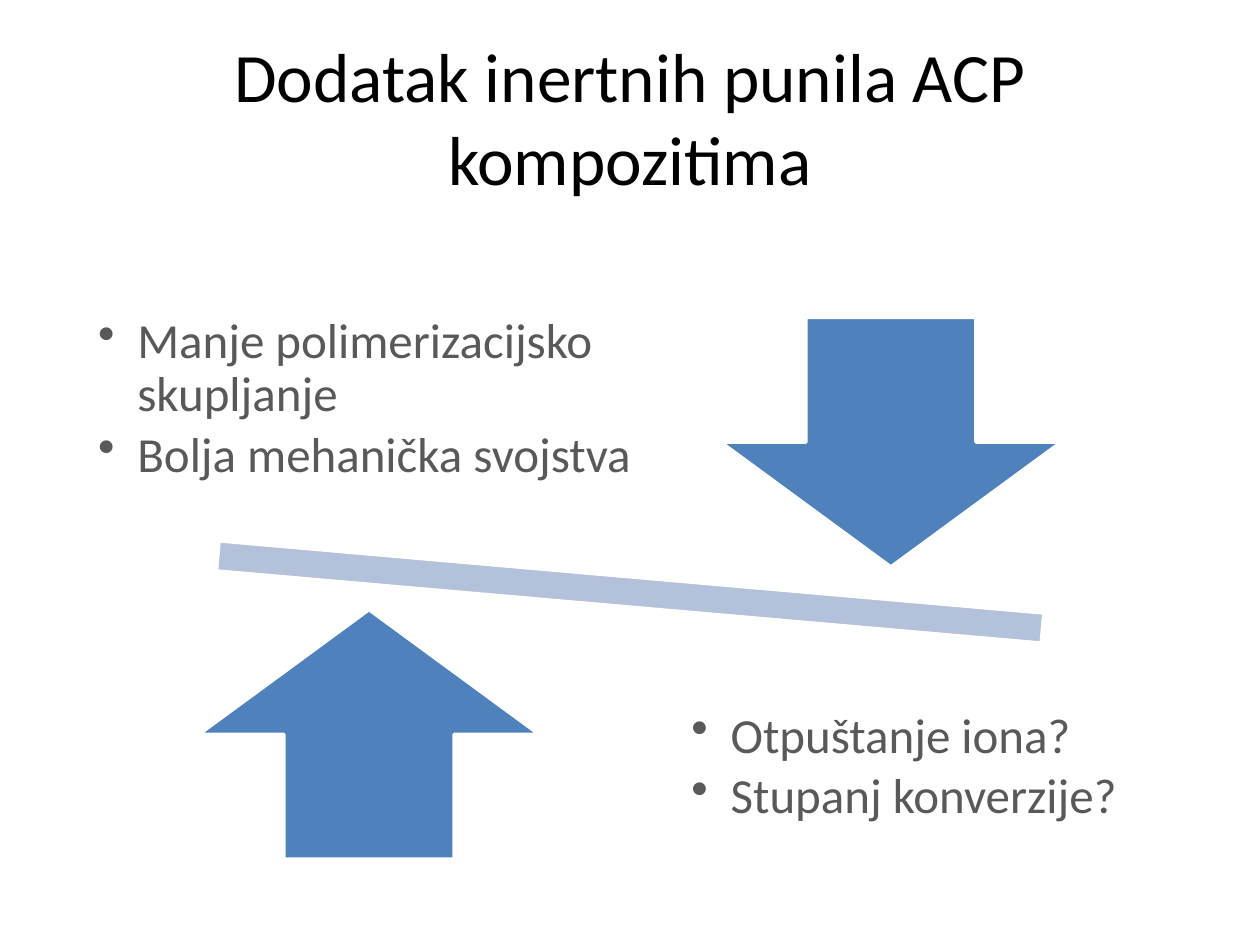
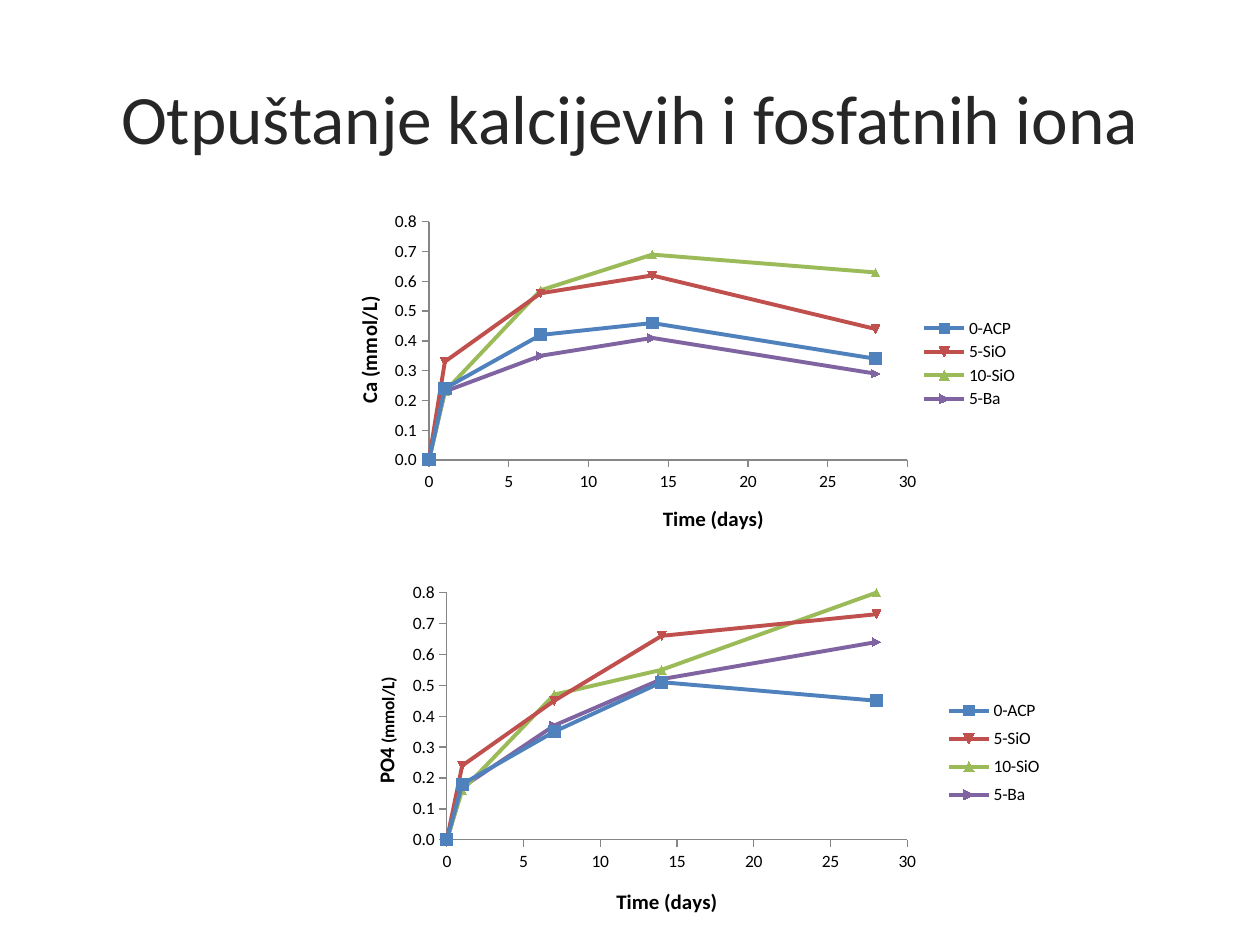
from lxml import etree
from pptx import Presentation
from pptx.chart.data import XyChartData
from pptx.dml.color import RGBColor
from pptx.enum.chart import XL_CHART_TYPE, XL_LEGEND_POSITION, XL_MARKER_STYLE, XL_TICK_MARK
from pptx.enum.shapes import MSO_SHAPE
from pptx.enum.text import MSO_ANCHOR, PP_ALIGN
from pptx.oxml import parse_xml
from pptx.oxml.ns import nsdecls, qn
from pptx.util import Cm, Pt

SCATTER = XL_CHART_TYPE.XY_SCATTER_SMOOTH
LEGEND_RIGHT = XL_LEGEND_POSITION.RIGHT
SQUARE = XL_MARKER_STYLE.SQUARE
OUTSIDE = XL_TICK_MARK.OUTSIDE
MINUS, DOWN, UP = MSO_SHAPE.MATH_MINUS, MSO_SHAPE.DOWN_ARROW, MSO_SHAPE.UP_ARROW
MIDDLE, CENTER = MSO_ANCHOR.MIDDLE, PP_ALIGN.CENTER

FONT = "Calibri"
BLACK, WHITE, GREY, DARK = "000000", "FFFFFF", "595959", "262626"
BLUE, PALE_BLUE, AXIS = "4F81BD", "B3C1DB", "868686"
SERIES_COLORS = [BLUE, "C0504D", "9BBB59", "8064A2"]


def rgb(value):
    return RGBColor.from_string(value)


def text(p, content, size=10, color=BLACK, bold=False):
    r = p.add_run()
    r.text = content
    r.font.name = FONT
    r.font.size = Pt(size)
    r.font.bold = bold
    r.font.color.rgb = rgb(color)


prs = Presentation()
prs.slide_width, prs.slide_height = Cm(25.4), Cm(19.05)

slides = []
for title, color in [
    ("Dodatak inertnih punila ACP kompozitima", BLACK),
    ("Otpuštanje kalcijevih i fosfatnih iona", DARK),
]:
    s = prs.slides.add_slide(prs.slide_layouts[5])
    sp = s.shapes.title
    sp.left, sp.top, sp.width, sp.height = Cm(1.27), Cm(0.76), Cm(22.86), Cm(3.18)
    tf = sp.text_frame
    tf.word_wrap = True
    tf.vertical_anchor = MIDDLE
    p = tf.paragraphs[0]
    p.alignment = CENTER
    text(p, title, size=39.6, color=color)
    slides.append(s)

balance, release = slides

for kind, box, fill, rotation in [
    (MINUS, (1.35, 10.64, 22.71, 2.59), PALE_BLUE, 5),
    (DOWN, (14.53, 6.4, 6.86, 5.03), BLUE, 0),
    (UP, (4.01, 12.29, 6.86, 5.03), BLUE, 0),
]:
    sp = balance.shapes.add_shape(kind, *map(Cm, box))
    sp.shadow.inherit = False
    sp.rotation = rotation
    sp.fill.solid()
    sp.fill.fore_color.rgb = rgb(fill)
    sp.line.color.rgb = rgb(WHITE)
    sp.line.width = Pt(2)

for box, items in [
    ((1.98, 6.38, 10.77, 3.7), ["Manje polimerizacijsko skupljanje", "Bolja mehanička svojstva"]),
    ((13.94, 14.33, 9.63, 2.5), ["Otpuštanje iona?", "Stupanj konverzije?"]),
]:
    tf = balance.shapes.add_textbox(*map(Cm, box)).text_frame
    tf.word_wrap = True
    tf.margin_left = tf.margin_top = tf.margin_right = tf.margin_bottom = 0
    for i, item in enumerate(items):
        p = tf.paragraphs[0] if i == 0 else tf.add_paragraph()
        pPr = p._p.get_or_add_pPr()
        pPr.set("marL", str(Cm(0.79)))
        pPr.set("indent", str(-Cm(0.79)))
        etree.SubElement(pPr, qn("a:buChar")).set("char", "•")
        p.line_spacing = 0.9
        p.space_after = Pt(4.2)
        text(p, item, size=28, color=GREY)

DAYS = [0, 1, 7, 14, 28]
NAMES = ["0-ACP", "5-SiO", "10-SiO", "5-Ba"]
CHARTS = [
    {
        "box": (6.3, 4.09, 14.4, 6.76),
        "title": [("Ca (mmol/L)", 12)],
        "format": "0.0",
        "values": [
            [0, 0.24, 0.42, 0.46, 0.34],
            [0, 0.33, 0.56, 0.62, 0.44],
            [0, 0.23, 0.57, 0.69, 0.63],
            [0, 0.23, 0.35, 0.41, 0.29],
        ],
        "plot": (0.163, 0.058, 0.67, 0.726),
        "legend": (0.85, 0.34, 0.14, 0.3),
        "titles": [(0.485, 0.91), (0.054, 0.28)],
    },
    {
        "box": (6.5, 11.73, 15.39, 6.83),
        "title": [("PO4 ", 12), ("(mmol/L)", 10)],
        "format": "#,##0.0",
        "values": [
            [0, 0.18, 0.35, 0.51, 0.45],
            [0, 0.24, 0.45, 0.66, 0.73],
            [0, 0.16, 0.47, 0.55, 0.8],
            [0, 0.17, 0.37, 0.52, 0.64],
        ],
        "plot": (0.163, 0.032, 0.603, 0.738),
        "legend": (0.81, 0.33, 0.14, 0.36),
        "titles": [(0.38, 0.9), (0.06, 0.275)],
    },
]

for spec_chart in CHARTS:
    data = XyChartData()
    for name, values in zip(NAMES, spec_chart["values"]):
        series = data.add_series(name)
        for day, value in zip(DAYS, values):
            series.add_data_point(day, value)
    chart = release.shapes.add_chart(SCATTER, *map(Cm, spec_chart["box"]), data).chart
    chart.has_title = False
    chart.font.name, chart.font.size = FONT, Pt(10)
    chart.font.color.rgb = rgb(BLACK)
    chart.plots[0].vary_by_categories = False
    chart.has_legend = True
    chart.legend.position = LEGEND_RIGHT
    chart.legend.include_in_layout = False

    for series, color in zip(chart.plots[0].series, SERIES_COLORS):
        series.smooth = True
        series.format.line.color.rgb = rgb(color)
        series.format.line.width = Pt(2.25)
    marker = chart.plots[0].series[0].marker
    marker.style, marker.size = SQUARE, 7
    marker.format.fill.solid()
    marker.format.fill.fore_color.rgb = rgb(BLUE)
    marker.format.line.fill.background()

    for axis, runs, top, step, number_format in [
        (chart.category_axis, [("Time (days)", 12)], 30, 5, "General"),
        (chart.value_axis, spec_chart["title"], 0.8, 0.1, spec_chart["format"]),
    ]:
        axis.minimum_scale, axis.maximum_scale, axis.major_unit = 0, top, step
        axis.has_major_gridlines = False
        axis.major_tick_mark = OUTSIDE
        axis.format.line.color.rgb = rgb(AXIS)
        axis.tick_labels.number_format = number_format
        axis.tick_labels.number_format_is_linked = False
        p = axis.axis_title.text_frame.paragraphs[0]
        for content, size in runs:
            text(p, content, size=size, bold=True)

    root = chart.element
    x_title, y_title = root.xpath(".//c:title")
    for element, index, box in [
        (root.xpath(".//c:plotArea")[0], 0, spec_chart["plot"]),
        (root.xpath(".//c:legend")[0], 1, spec_chart["legend"]),
        (x_title, 1, spec_chart["titles"][0]),
        (y_title, 1, spec_chart["titles"][1]),
    ]:
        for old in element.findall(qn("c:layout")):
            element.remove(old)
        layout = parse_xml(f"<c:layout {nsdecls('c')}><c:manualLayout/></c:layout>")
        settings = [("xMode", "edge"), ("yMode", "edge"), *zip("xywh", box)]
        if index == 0:
            settings.insert(0, ("layoutTarget", "inner"))
        for tag, value in settings:
            etree.SubElement(layout[0], qn(f"c:{tag}")).set("val", str(value))
        element.insert(index, layout)

prs.save("out.pptx")
